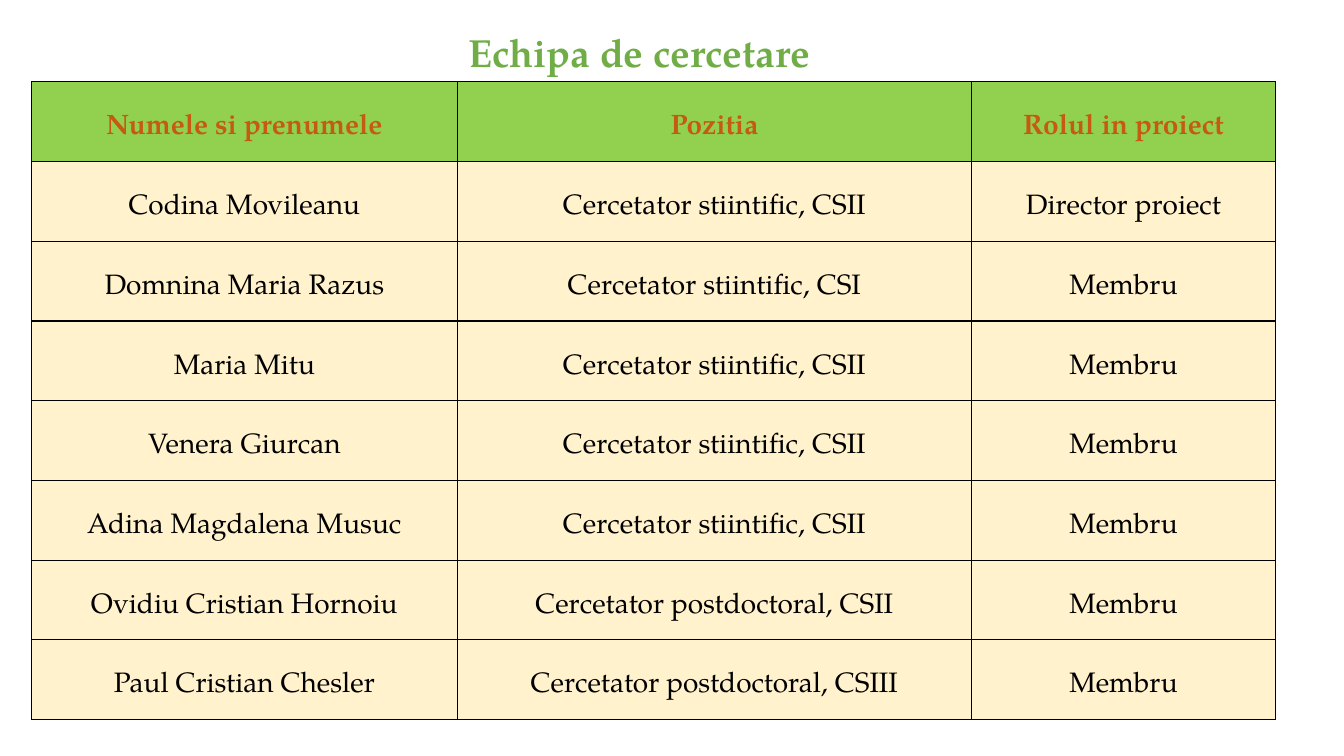
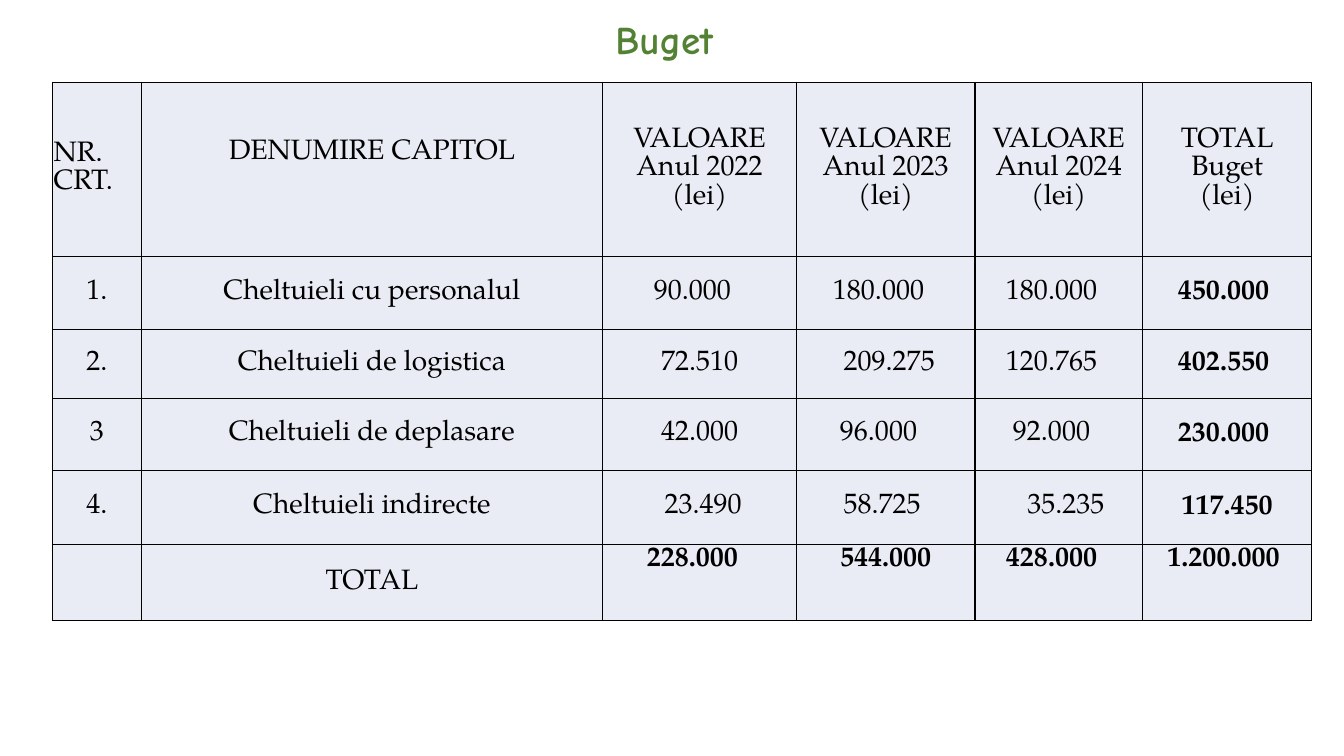
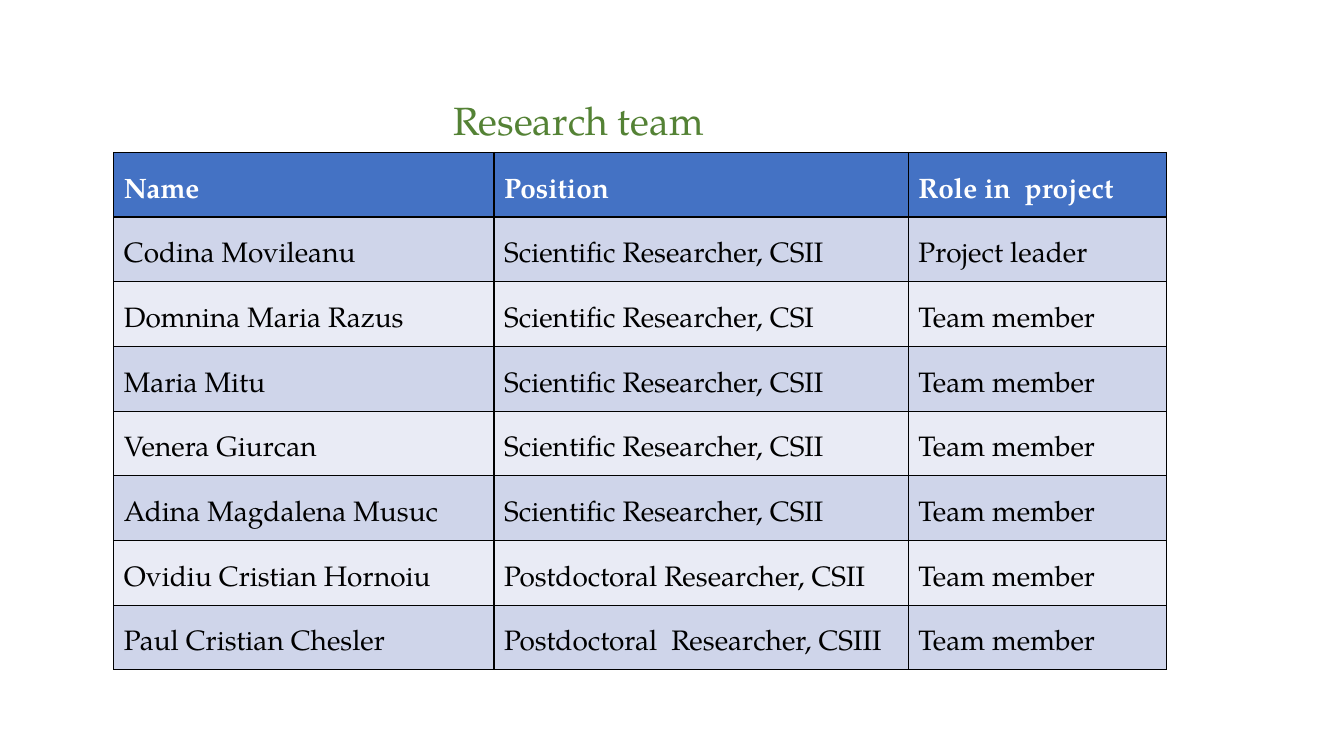
from lxml import etree
from pptx import Presentation
from pptx import util as u
from pptx.dml import color
from pptx.enum import text
from pptx.oxml import ns

BODY_FONT, PLAYFUL_FONT = "TeX Gyre Pagella", "Comic Neue"
BLACK, WHITE = "000000", "FFFFFF"
LEAF, FOREST, LIME, RUST, CREAM = "70AD47", "548235", "92D050", "C55A11", "FFF2CC"
BLUE, BLUE_MID, BLUE_PALE = "4472C4", "CFD5EA", "E9EBF5"
LEFT, CENTER, JUSTIFY = text.PP_ALIGN.LEFT, text.PP_ALIGN.CENTER, text.PP_ALIGN.JUSTIFY
TOP, MIDDLE = text.MSO_ANCHOR.TOP, text.MSO_ANCHOR.MIDDLE
THIN_INSET, NUDGE = 0.03, 0.18

MEMBERS = ["Codina Movileanu", "Domnina Maria Razus", "Maria Mitu", "Venera Giurcan",
           "Adina Magdalena Musuc", "Ovidiu Cristian Hornoiu", "Paul Cristian Chesler"]
POZITII = (["Cercetator stiintific, CSII", "Cercetator stiintific, CSI"]
           + ["Cercetator stiintific, CSII"] * 3
           + ["Cercetator postdoctoral, CSII", "Cercetator postdoctoral, CSIII"])
POSITIONS = (["Scientific Researcher, CSII", "Scientific Researcher, CSI"]
             + ["Scientific Researcher, CSII"] * 3
             + ["Postdoctoral Researcher, CSII", "Postdoctoral  Researcher, CSIII"])

BUDGET_HEADER = ["NR. CRT.", "DENUMIRE CAPITOL", "VALOARE\nAnul 2022\n(lei)",
                 "VALOARE\nAnul 2023\n(lei)", "VALOARE\nAnul 2024\n(lei)", "TOTAL\nBuget\n(lei)"]
BUDGET_ROWS = [
    ("1.", "Cheltuieli cu personalul",
     [("90.000", -2), ("180.000", -2), ("180.000", -2), ("450.000", -1)]),
    ("2.", "Cheltuieli de logistica",
     [("72.510", 0), ("209.275", 1), ("120.765", -2), ("402.550", -1)]),
    ("3", "Cheltuieli de deplasare",
     [("42.000", 0), ("96.000", -2), ("92.000", -2), ("230.000", -1)]),
    ("4.", "Cheltuieli indirecte",
     [("23.490", 1), ("58.725", -1), ("35.235", 2), ("117.450", 0)]),
    ("", "TOTAL",
     [("228.000", -2), ("544.000", 0), ("428.000", -2), ("1.200.000", -1)]),
]


def rgb(value):
    """Turn a hex string into a colour."""
    return color.RGBColor.from_string(value)


def write(frame, words, size, hue, bold=False, align=LEFT, spacing=None, font=BODY_FONT):
    """Write one paragraph for each line of words."""
    for index, line in enumerate(words.split("\n")):
        paragraph = frame.paragraphs[0] if index == 0 else frame.add_paragraph()
        paragraph.alignment = align
        if spacing:
            paragraph.line_spacing = spacing
        run = paragraph.add_run()
        run.text = line
        run.font.size = u.Pt(size)
        run.font.name = font
        run.font.bold = bold
        run.font.color.rgb = rgb(hue)


def add_title(slide, box, words, hue, **style):
    """Place a slide title in its box."""
    frame = slide.shapes.add_textbox(*map(u.Cm, box)).text_frame
    frame.word_wrap = True
    write(frame, words, 28, hue, **style)


def add_grid(slide, left, top, widths, heights):
    """Add an empty table with the given column widths and row heights."""
    table = slide.shapes.add_table(len(heights), len(widths), u.Cm(left), u.Cm(top),
                                   u.Cm(sum(widths)), u.Cm(sum(heights))).table
    for column, width in zip(table.columns, widths):
        column.width = u.Cm(width)
    for row, height in zip(table.rows, heights):
        row.height = u.Cm(height)
    return table


def fill_cell(cell, words, fill, hue=BLACK, anchor=MIDDLE, **style):
    """Give a cell its border, fill and text."""
    properties = cell._tc.get_or_add_tcPr()
    for side in ("lnL", "lnR", "lnT", "lnB"):
        line = etree.SubElement(properties, ns.qn("a:" + side), w=str(u.Pt(1)))
        solid = etree.SubElement(line, ns.qn("a:solidFill"))
        etree.SubElement(solid, ns.qn("a:srgbClr"), val=BLACK)
    cell.fill.solid()
    cell.fill.fore_color.rgb = rgb(fill)
    cell.vertical_anchor = anchor
    if words:
        write(cell.text_frame, words, 20, hue, **style)


def inset_cell(cell, shift=0, bottom=0):
    """Set thin cell margins, widened to shift the text sideways or up."""
    cell.margin_top = u.Cm(THIN_INSET)
    cell.margin_bottom = u.Cm(THIN_INSET + bottom)
    cell.margin_left = u.Cm(THIN_INSET + NUDGE * max(shift, 0))
    cell.margin_right = u.Cm(THIN_INSET + NUDGE * max(-shift, 0))


def add_team(slide, left, top, widths, row_height, header, positions, roles,
             header_fill, header_hue, row_fills, align):
    """Place the table of team members."""
    leader, member = roles
    rows = [header] + [(name, position, member if index else leader)
                       for index, (name, position) in enumerate(zip(MEMBERS, positions))]
    table = add_grid(slide, left, top, widths, [row_height] * len(rows))
    for r, row in enumerate(rows):
        fill = row_fills[(r - 1) % len(row_fills)] if r else header_fill
        for c, words in enumerate(row):
            fill_cell(table.cell(r, c), words, fill, BLACK if r else header_hue,
                      bold=r == 0, align=align, spacing=1.5)


def add_budget(slide, left, top, widths, heights):
    """Place the budget table."""
    table = add_grid(slide, left, top, widths, heights)
    for c, words in enumerate(BUDGET_HEADER):
        cell = table.cell(0, c)
        inset_cell(cell, bottom=0.81 if c == 1 else 0)
        fill_cell(cell, words, BLUE_PALE, align=CENTER if c else LEFT)
    for r, (number, chapter, amounts) in enumerate(BUDGET_ROWS, 1):
        is_total = r == len(BUDGET_ROWS)
        for c, (words, shift) in enumerate([(number, 0), (chapter, 0)] + amounts):
            is_amount = c > 1
            cell = table.cell(r, c)
            inset_cell(cell, shift)
            fill_cell(cell, words, BLUE_PALE, align=CENTER,
                      anchor=TOP if is_total and is_amount else MIDDLE,
                      bold=is_amount and (is_total or c == len(widths) - 1))


def main():
    """Build and save the three slides."""
    deck = Presentation()
    deck.slide_width, deck.slide_height = u.Cm(33.87), u.Cm(19.05)
    echipa, buget, team = [deck.slides.add_slide(deck.slide_layouts[6]) for _ in range(3)]

    add_team(echipa, 0.79, 2.06, [10.74, 12.95, 7.67], 2.01,
             ("Numele si prenumele", "Pozitia", "Rolul in proiect"), POZITII,
             ("Director proiect", "Membru"), LIME, RUST, [CREAM], CENTER)
    add_title(echipa, (11.56, 0.58, 9.22, 1.45), "Echipa de cercetare", LEAF, bold=True)

    add_title(buget, (9.63, 0.25, 14.22, 1.45), "Buget", FOREST, bold=True,
              align=CENTER, font=PLAYFUL_FONT)
    add_budget(buget, 1.32, 2.08, [2.24, 11.63, 4.88, 4.5, 4.22, 4.27],
               [4.39, 1.83, 1.75, 1.8, 1.88, 1.91])

    add_team(team, 2.87, 3.84, [9.58, 10.44, 6.5], 1.63,
             ("Name", "Position", "Role in  project"), POSITIONS,
             ("Project leader", "Team member"), BLUE, WHITE, [BLUE_MID, BLUE_PALE], JUSTIFY)
    add_title(team, (11.18, 2.29, 6.91, 1.45), "Research team", FOREST)

    deck.save("out.pptx")


if __name__ == "__main__":
    main()
